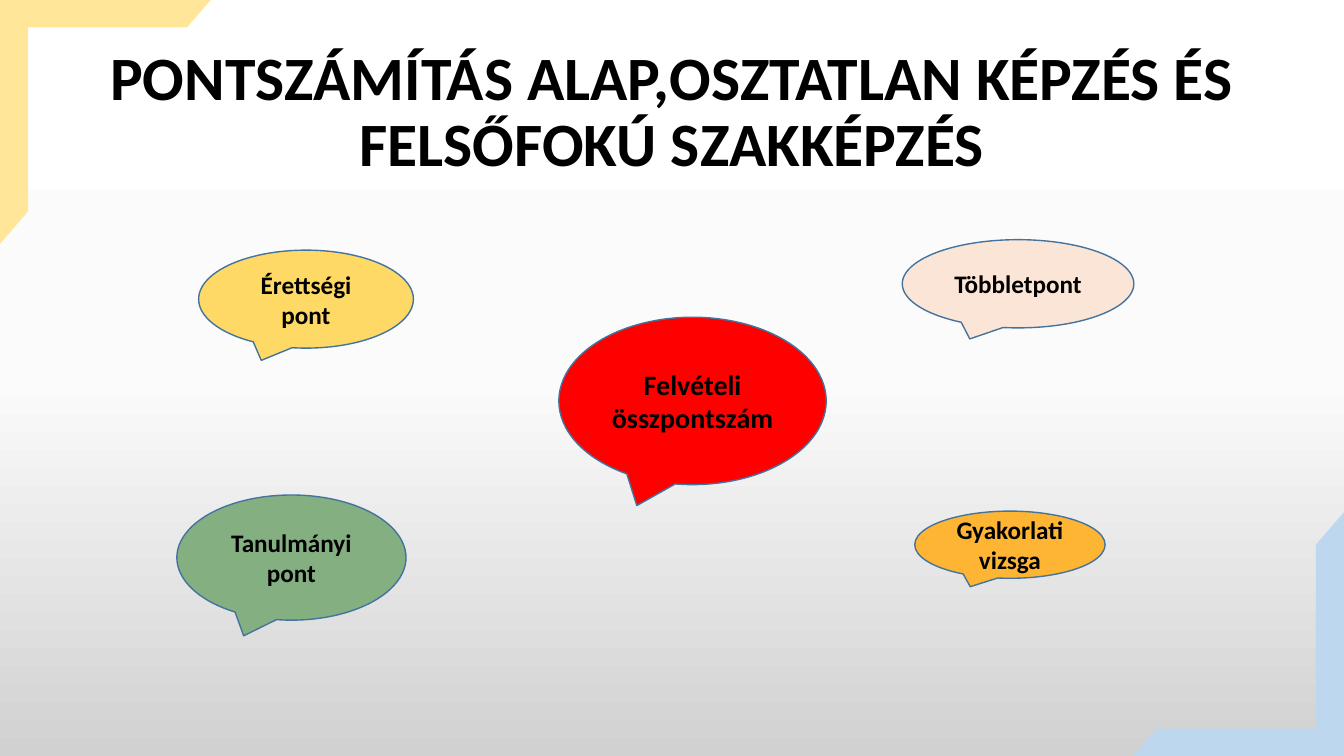
from copy import deepcopy

from pptx import Presentation
from pptx.dml.color import RGBColor
from pptx.enum.shapes import MSO_SHAPE
from pptx.enum.text import MSO_ANCHOR, PP_ALIGN
from pptx.util import Pt

WIDTH, HEIGHT = 960, 540
FRAME_WIDTH, FRAME_HEIGHT = 150.5, 174.2
BACKGROUND_STOPS = [(0, "FFFFFF"), (0.5, "FBFBFB"), (1, "D1D1D1")]
TITLE = "PONTSZÁMÍTÁS ALAP,OSZTATLAN KÉPZÉS ÉS FELSŐFOKÚ SZAKKÉPZÉS"

# text, left, top, width, height, fill, font size
CALLOUTS = [
    ("Felvételi összpontszám", 399.2, 226.6, 191, 119.6, "FF0000", 20),
    ("Érettségi pont", 141.9, 178.7, 153.4, 70, "FFD966", 18),
    ("Többletpont", 644.5, 171.2, 165.4, 63, "FBE5D6", 18),
    ("Tanulmányi pont", 126.3, 353.6, 163.7, 89.4, "84AF81", 18),
    ("Gyakorlati vizsga", 653.4, 365.1, 136, 48, "FDB533", 18),
]


def color(value):
    return RGBColor.from_string(value)


def paint_background(slide):
    fill = slide.background.fill
    fill.gradient()
    fill.gradient_angle = 270
    stop_list = fill._fill._gradFill.gsLst
    stop_list.append(deepcopy(stop_list[-1]))
    for stop, (position, value) in zip(fill.gradient_stops, BACKGROUND_STOPS):
        stop.position = position
        stop.color.rgb = color(value)


def write_text(shape, text, size, line_spacing=1.0):
    frame = shape.text_frame
    frame.word_wrap = True
    frame.vertical_anchor = MSO_ANCHOR.MIDDLE
    paragraph = frame.paragraphs[0]
    paragraph.alignment = PP_ALIGN.CENTER
    paragraph.line_spacing = line_spacing
    run = paragraph.add_run()
    run.text = text
    font_format = {"name": "Calibri", "size": Pt(size), "bold": True}
    for attribute, value in font_format.items():
        setattr(run.font, attribute, value)
    run.font.color.rgb = color("000000")


def add_filled_shape(slide, kind, left, top, width, height, fill):
    shape = slide.shapes.add_shape(kind, Pt(left), Pt(top), Pt(width), Pt(height))
    shape.shadow.inherit = False
    shape.fill.solid()
    shape.fill.fore_color.rgb = color(fill)
    return shape


def add_corner_frame(slide, left, top, fill, rotation=0):
    shape = add_filled_shape(
        slide, MSO_SHAPE.HALF_FRAME, left, top, FRAME_WIDTH, FRAME_HEIGHT, fill
    )
    shape.adjustments[0] = 0.13
    shape.adjustments[1] = 0.134
    shape.rotation = rotation
    shape.line.fill.background()


def add_title(slide):
    title = slide.shapes.add_textbox(Pt(66), Pt(28.8), Pt(828), Pt(104.4))
    write_text(title, TITLE, 44, 0.9)


def add_callout(slide, text, left, top, width, height, fill, size):
    shape = add_filled_shape(
        slide, MSO_SHAPE.OVAL_CALLOUT, left, top, width, height, fill
    )
    shape.line.color.rgb = color("43739E")
    shape.line.width = Pt(1)
    write_text(shape, text, size)


def main():
    presentation = Presentation()
    presentation.slide_width = Pt(WIDTH)
    presentation.slide_height = Pt(HEIGHT)
    slide = presentation.slides.add_slide(presentation.slide_layouts[6])

    paint_background(slide)
    add_corner_frame(slide, 0, 0, "FFE699")
    add_corner_frame(slide, WIDTH - FRAME_WIDTH, HEIGHT - FRAME_HEIGHT, "BDD7EE", 180)
    add_title(slide)
    for callout in CALLOUTS:
        add_callout(slide, *callout)

    presentation.save("out.pptx")


if __name__ == "__main__":
    main()
